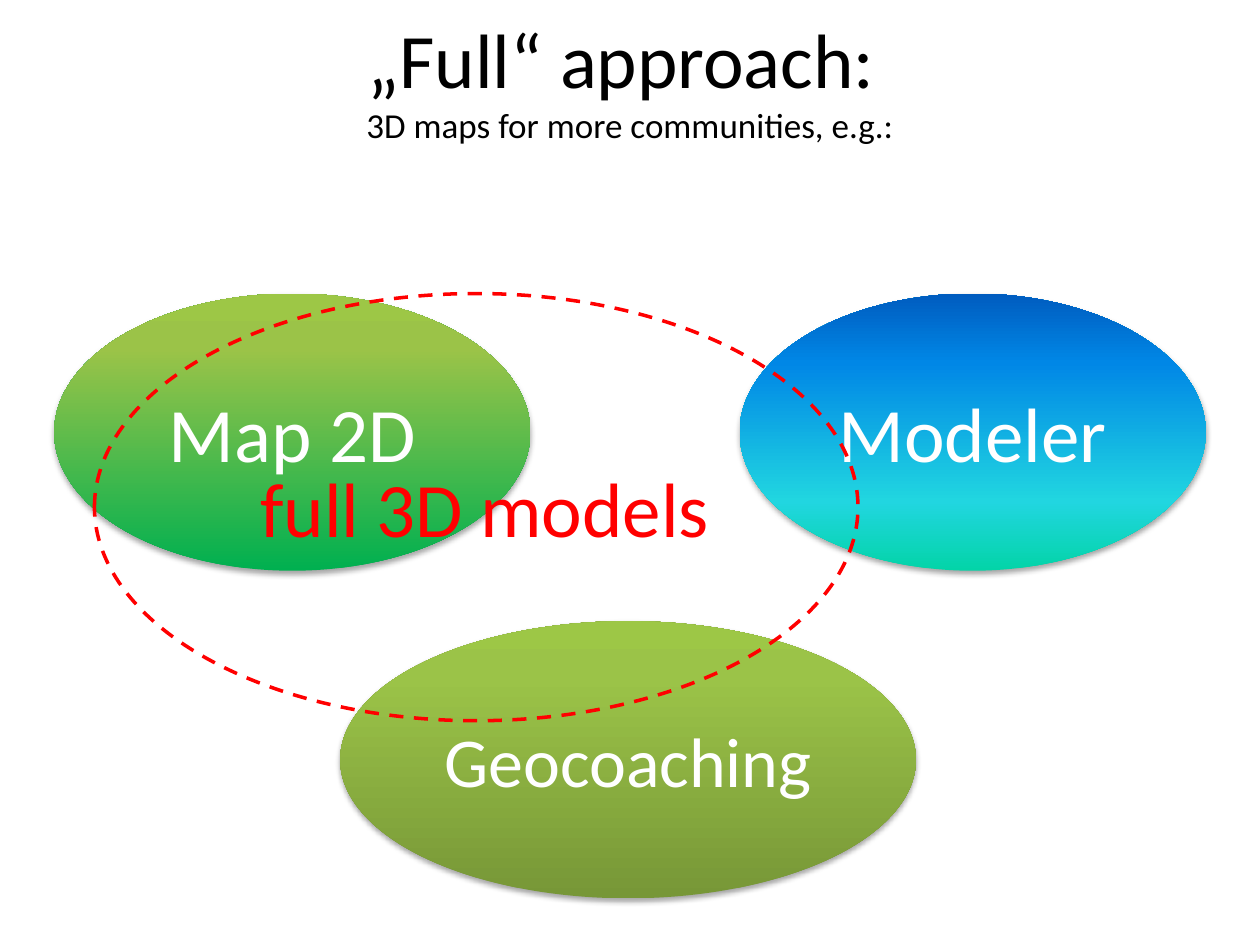
from lxml import etree
from pptx import Presentation, util as u
from pptx.dml.color import RGBColor
from pptx.enum import dml, shapes, text
from pptx.oxml.ns import qn

FONT = "Calibri"
BLACK = RGBColor(0, 0, 0)
WHITE = RGBColor(255, 255, 255)
RED = RGBColor(255, 0, 0)
LIME = [(80, RGBColor(0x9B, 0xC3, 0x48)), (100, RGBColor(0x9D, 0xC7, 0x46))]
GREEN = [(0, RGBColor(0x00, 0xB0, 0x50))] + LIME
OLIVE = [(0, RGBColor(0x77, 0x97, 0x37))] + LIME
OCEAN = [(0, RGBColor(0x03, 0xD4, 0xA8)), (25, RGBColor(0x21, 0xD6, 0xE0)),
         (75, RGBColor(0x00, 0x87, 0xE6)), (100, RGBColor(0x00, 0x5C, 0xBF))]

WIDTH, HEIGHT = 10, 7.5
UPPER, LOWER = 2.33, 4.93
OVAL_HEIGHT = 2.2

TITLE = [("„Full“ approach: ", 44), ("3D maps for more communities, e.g.:", 20)]
# label, text size, left, top, width, gradient from bottom to top
COMMUNITIES = [
    ("Map 2D", 44, 0.43, UPPER, 3.78, GREEN),
    ("Modeler", 44, 5.87, UPPER, 3.7, OCEAN),
    ("Geocoaching", 40, 2.7, LOWER, 4.57, OLIVE),
]
OVERLAP = (" full 3D models", 44, 0.75, UPPER, 6.06, 3.39)


def write(sp, lines, color):
    """Centre the lines, given as (wording, size), in one paragraph."""
    tf = sp.text_frame
    tf.word_wrap = True
    tf.vertical_anchor = text.MSO_ANCHOR.MIDDLE
    p = tf.paragraphs[0]
    p.alignment = text.PP_ALIGN.CENTER
    for i, (wording, size) in enumerate(lines):
        if i:
            p.add_line_break()
        r = p.add_run()
        r.text = wording
        r.font.name, r.font.size = FONT, u.Pt(size)
        r.font.color.rgb = color


def add_oval(slide, left, top, width, height):
    sp = slide.shapes.add_shape(shapes.MSO_SHAPE.OVAL,
                                *map(u.Inches, (left, top, width, height)))
    sp.shadow.inherit = False
    return sp


def fill_upward(sp, stops):
    sp.fill.gradient()
    sp.fill.gradient_angle = 90
    stop_list = sp.element.spPr.find(qn("a:gradFill")).find(qn("a:gsLst"))
    for old in list(stop_list):
        stop_list.remove(old)
    for share, color in stops:
        stop = etree.SubElement(stop_list, qn("a:gs"), pos=str(share * 1000))
        etree.SubElement(stop, qn("a:srgbClr"), val=str(color))


def drop_shadow(sp):
    effects = sp.element.spPr.find(qn("a:effectLst"))
    shadow = etree.SubElement(
        effects, qn("a:outerShdw"), blurRad=str(u.Pt(3.1)), dist=str(u.Pt(1.8)),
        dir=str(90 * 60000), rotWithShape="0")
    color = etree.SubElement(shadow, qn("a:srgbClr"), val=str(BLACK))
    etree.SubElement(color, qn("a:alpha"), val="35000")


def main():
    prs = Presentation()
    prs.slide_width, prs.slide_height = u.Inches(WIDTH), u.Inches(HEIGHT)
    slide = prs.slides.add_slide(prs.slide_layouts[6])

    title = slide.shapes.add_textbox(0, 0, prs.slide_width, prs.slide_height // 6)
    write(title, TITLE, BLACK)

    for label, size, left, top, width, stops in COMMUNITIES:
        sp = add_oval(slide, left, top, width, OVAL_HEIGHT)
        fill_upward(sp, stops)
        sp.line.fill.background()
        drop_shadow(sp)
        write(sp, [(label, size)], WHITE)

    label, size, *box = OVERLAP
    sp = add_oval(slide, *box)
    sp.fill.background()
    sp.line.color.rgb = RED
    sp.line.width = u.Pt(2)
    sp.line.dash_style = dml.MSO_LINE.DASH
    write(sp, [(label, size)], RED)

    prs.save("out.pptx")


if __name__ == "__main__":
    main()
